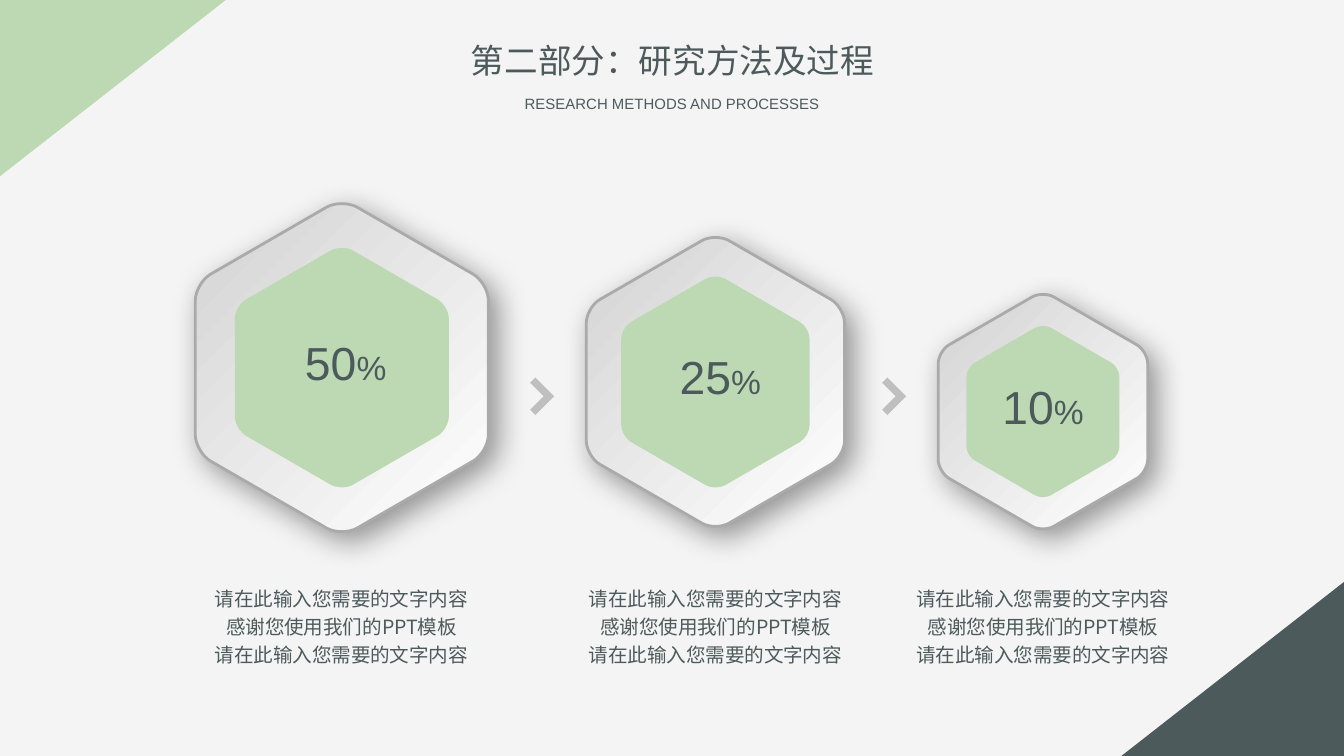
"""Build a slide with three shrinking percentage hexagons and their captions."""
from math import cos, radians, sin, sqrt

from lxml.etree import SubElement
from pptx import Presentation
from pptx.dml.color import RGBColor
from pptx.enum.shapes import MSO_SHAPE as SHAPE
from pptx.enum.text import MSO_ANCHOR as ANCHOR, PP_ALIGN as ALIGN
from pptx.oxml import parse_xml
from pptx.oxml.ns import nsdecls, qn
from pptx.util import Cm, Pt

PAPER = RGBColor(0xF4, 0xF4, 0xF4)
GREEN = RGBColor(0xBC, 0xD9, 0xB4)
SLATE = RGBColor(0x4D, 0x5A, 0x5C)
WHITE = RGBColor(0xFF, 0xFF, 0xFF)
SILVER = RGBColor(0xD3, 0xD3, 0xD3)
RIM = RGBColor(0xAA, 0xAA, 0xAA)
ARROW = RGBColor(0xBF, 0xBF, 0xBF)
LATIN, CJK = "Arial", "Noto Sans CJK SC"
SHADOW = (
    f'<a:outerShdw {nsdecls("a")} blurRad="203200" dist="76200" dir="2700000"'
    ' algn="tl" rotWithShape="0"><a:srgbClr val="000000">'
    '<a:alpha val="40000"/></a:srgbClr></a:outerShdw>'
)


def write(p, text, size=10.5, font=CJK, spacing=1.0):
    p.alignment = ALIGN.CENTER
    p.line_spacing = spacing
    r = p.add_run()
    r.text = text
    r.font.name = font
    r.font.size = Pt(size)
    r.font.color.rgb = SLATE
    r._r.get_or_add_rPr().append(
        parse_xml(f'<a:ea {nsdecls("a")} typeface="{font}"/>'))


def add_outline(points, turn, color):
    pts = [(Cm(x), Cm(y)) for x, y in points]
    fb = s.shapes.build_freeform(*pts[0])
    fb.add_line_segments(pts[1:], close=True)
    sp = fb.convert_to_shape()
    sp.rotation = turn
    sp.shadow.inherit = False
    sp.fill.solid()
    sp.fill.fore_color.rgb = color
    sp.line.fill.background()
    return sp


prs = Presentation()
prs.slide_width, prs.slide_height = Cm(25.4), Cm(14.29)
s = prs.slides.add_slide(prs.slide_layouts[5])
s.background.fill.solid()
s.background.fill.fore_color.rgb = PAPER

for x, y, w, h, turn, color in [
    (0.46, -0.48, 3.35, 4.29, 90, GREEN),
    (21.64, 10.54, 3.3, 4.22, 270, SLATE),
]:
    sp = s.shapes.add_shape(SHAPE.RIGHT_TRIANGLE, Cm(x), Cm(y), Cm(w), Cm(h))
    sp.rotation = turn
    sp.shadow.inherit = False
    sp.fill.solid()
    sp.fill.fore_color.rgb = color
    sp.line.fill.background()

title = s.shapes.title
title.left, title.top, title.width, title.height = Cm(8.61), Cm(0.62), Cm(8.2), Cm(1.02)
title.text_frame.vertical_anchor = ANCHOR.TOP
title.text_frame.word_wrap = False
write(title.text_frame.paragraphs[0], "第二部分：研究方法及过程", size=18)

tf = s.shapes.add_textbox(Cm(9.63), Cm(1.67), Cm(6.15), Cm(0.61)).text_frame
tf.word_wrap = False
write(tf.paragraphs[0], "RESEARCH METHODS AND PROCESSES", size=8, font=LATIN)

for number, cx, cy, width, label_x, label_y, caption_x in [
    ("50", 6.46, 6.95, 5.54, 4.01, 6.23, 3.7),
    ("25", 13.52, 7.22, 4.88, 11.09, 6.51, 10.77),
    ("10", 19.71, 7.78, 3.96, 17.19, 7.07, 16.96),
]:
    for scale, color in ((1, SILVER), (0.73, GREEN)):
        radius = width * scale / sqrt(3)
        points = []
        for a in range(0, 360, 60):
            for toward, share in ((-120, 0.104), (-120, 0.048), (120, 0.048), (120, 0.104)):
                points.append((
                    cx + radius * (cos(radians(a)) + share * cos(radians(a + toward))),
                    cy + radius * (sin(radians(a)) + share * sin(radians(a + toward))),
                ))
        sp = add_outline(points, 90, color)
        lines = list(sp._element.spPr.iter(qn("a:lnTo")))
        for i in range(0, len(lines), 4):
            curve = SubElement(lines[i].getparent(), qn("a:cubicBezTo"))
            lines[i].addprevious(curve)
            for line in lines[i:i + 3]:
                curve.append(line[0])
                line.getparent().remove(line)
        if scale == 1:
            sp.fill.gradient()
            sp.fill.gradient_angle = 225
            for stop, shade, at in zip(sp.fill.gradient_stops, (WHITE, SILVER), (0, 1)):
                stop.color.rgb = shade
                stop.position = at
            sp.line.color.rgb = RIM
            sp.line.width = Pt(1.5)
            sp._element.spPr.find(qn("a:effectLst")).append(parse_xml(SHADOW))

    tf = s.shapes.add_textbox(Cm(label_x), Cm(label_y), Cm(5.05), Cm(1.19)).text_frame
    tf.word_wrap = True
    tf.margin_left = tf.margin_right = Cm(0.15)
    tf.margin_top = tf.margin_bottom = Cm(0.08)
    write(tf.paragraphs[0], number, size=24.8, font=LATIN)
    write(tf.paragraphs[0], "%", size=18, font=LATIN)

    tf = s.shapes.add_textbox(Cm(caption_x), Cm(10.91), Cm(5.51), Cm(1.78)).text_frame
    tf.word_wrap = True
    tf.margin_left = tf.margin_right = Cm(0.18)
    tf.margin_top = tf.margin_bottom = Cm(0.1)
    prompt = "请在此输入您需要的文字内容"
    for i, text in enumerate([prompt, "感谢您使用我们的PPT模板", prompt]):
        p = tf.add_paragraph() if i else tf.paragraphs[0]
        write(p, text, spacing=1.2)

for x in (9.87, 16.52):
    add_outline([
        (x + dx, 7.24 + dy) for dx, dy in
        [(0.5, 0.5), (0.5, 0), (0.36, 0), (0.36, 0.36), (0, 0.36), (0, 0.5)]
    ], 315, ARROW)

prs.save("out.pptx")
